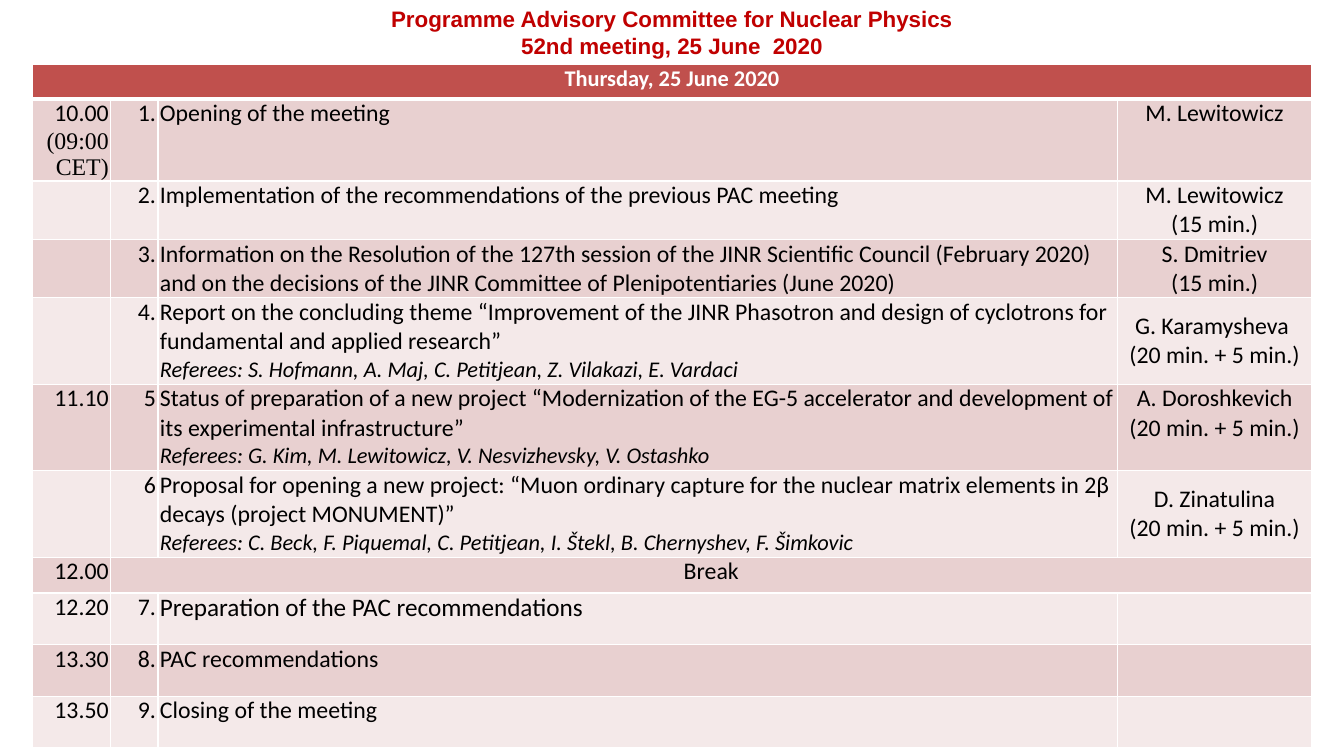
from dataclasses import dataclass

import pptx
import pptx.dml.color
import pptx.enum.text
import pptx.oxml
import pptx.oxml.ns
import pptx.util
from lxml import etree

Cm = pptx.util.Cm
Pt = pptx.util.Pt
RGBColor = pptx.dml.color.RGBColor
Align = pptx.enum.text.PP_ALIGN
Anchor = pptx.enum.text.MSO_ANCHOR

WHITE = RGBColor(0xFF, 0xFF, 0xFF)
BLACK = RGBColor(0x00, 0x00, 0x00)
TITLE_RED = RGBColor(0xC0, 0x00, 0x00)
HEADER_RED = RGBColor(0xC0, 0x50, 0x4D)
BAND_DARK = RGBColor(0xE8, 0xD0, 0xD0)
BAND_LIGHT = RGBColor(0xF4, 0xE9, 0xE9)

LEFT, TOP, WIDTH = 0.81, 1.63, 32.25
COL_WIDTHS = [1.98, 1.19, 24.18, 4.9]
HEADER_HEIGHT = 0.86


@dataclass(frozen=True)
class Style:
    size: float = 17
    font: str = "Calibri"
    color: RGBColor = BLACK
    bold: bool = False
    italic: bool = False


BODY = Style()
LARGE = Style(size=18)
REFEREES = Style(size=16, italic=True)
CET = Style(font="Times New Roman")
HEADER = Style(size=16, color=WHITE, bold=True)
TITLE = Style(size=16, font="Arial", color=TITLE_RED, bold=True)


@dataclass(frozen=True)
class Item:
    height: float
    time: str
    number: str
    topic: str
    speaker: str = ""
    duration: str = ""
    referees: str = ""
    zone: str = ""
    topic_style: Style = BODY
    centred: bool = False


ITEMS = [
    Item(2.03, "10.00", "1.", "Opening of the meeting", "M. Lewitowicz", zone="(09:00|CET)"),
    Item(1.47, "", "2.", "Implementation of the recommendations of the previous PAC meeting",
         "M. Lewitowicz", "(15 min.)"),
    Item(1.47, "", "3.",
         "Information on the Resolution of the 127th session of the JINR Scientific Council "
         "(February 2020) and on the decisions of the JINR Committee of Plenipotentiaries (June 2020)",
         "S. Dmitriev", "(15 min.)"),
    Item(2.18, "", "4.",
         "Report on the concluding theme “Improvement of the JINR Phasotron and design of "
         "cyclotrons for fundamental and applied research”",
         "G. Karamysheva ", "(20 min. + 5 min.)",
         "Referees: S. Hofmann, A. Maj, C. Petitjean, Z. Vilakazi, E. Vardaci", centred=True),
    Item(2.18, "11.10", "5",
         "Status of preparation of a new project “Modernization of the EG-5 accelerator and "
         "development of its experimental infrastructure”",
         "A. Doroshkevich", "(20 min. + 5 min.)",
         "Referees: G. Kim, M. Lewitowicz, V. Nesvizhevsky, V. Ostashko"),
    Item(2.18, "", "6",
         "Proposal for opening a new project: “Muon ordinary capture for the nuclear matrix "
         "elements in 2β decays (project MONUMENT)”",
         "D. Zinatulina", "(20 min. + 5 min.)",
         "Referees: C. Beck, F. Piquemal, C. Petitjean, I. Štekl, B. Chernyshev, F. Šimkovic",
         centred=True),
    Item(0.9, "12.00", "", "Break"),
    Item(1.3, "12.20", "7.", "Preparation of the PAC recommendations", topic_style=LARGE),
    Item(1.3, "13.30", "8.", "PAC recommendations"),
    Item(1.3, "13.50", "9.", "Closing of the meeting"),
]


def write(tf, lines: list[tuple[str, Style]], align: Align) -> None:
    shown = [(text, style) for text, style in lines if text]
    for i, (text, style) in enumerate(shown):
        p = tf.paragraphs[0] if i == 0 else tf.add_paragraph()
        p.alignment = align
        r = p.add_run()
        r.text = text
        r.font.size = Pt(style.size)
        r.font.name = style.font
        r.font.color.rgb = style.color
        r.font.bold = style.bold
        r.font.italic = style.italic


def format_cell(cell, fill: RGBColor, top: float = 1, bottom: float = 1) -> None:
    qn = pptx.oxml.ns.qn
    tcPr = cell._tc.get_or_add_tcPr()
    for side, width in (("L", 1), ("R", 1), ("T", top), ("B", bottom)):
        ln = etree.SubElement(tcPr, qn(f"a:ln{side}"), w=str(Pt(width)))
        solid = etree.SubElement(ln, qn("a:solidFill"))
        etree.SubElement(solid, qn("a:srgbClr"), val=str(WHITE))
    cell.fill.solid()
    cell.fill.fore_color.rgb = fill
    cell.margin_left = cell.margin_right = Cm(0.05)
    cell.margin_top = cell.margin_bottom = 0


def fill_item(tbl, row: int, item: Item) -> None:
    time, number, topic, speaker = (tbl.cell(row, c) for c in range(4))
    zone = [(text, CET) for text in item.zone.split("|")]
    write(time.text_frame, [(item.time, BODY), *zone], Align.RIGHT)
    if not item.number:
        number.merge(speaker)
        write(number.text_frame, [(item.topic, item.topic_style)], Align.CENTER)
        return
    write(number.text_frame, [(item.number, BODY)], Align.RIGHT)
    write(topic.text_frame, [(item.topic, item.topic_style), (item.referees, REFEREES)], Align.LEFT)
    write(speaker.text_frame, [(item.speaker, BODY), (item.duration, BODY)], Align.CENTER)
    if item.centred:
        speaker.vertical_anchor = Anchor.MIDDLE
    if item.referees:
        speaker.margin_left = speaker.margin_right = 0


def add_agenda(s) -> None:
    heights = [HEADER_HEIGHT] + [item.height for item in ITEMS]
    tbl = s.shapes.add_table(len(heights), len(COL_WIDTHS), Cm(LEFT), Cm(TOP),
                             Cm(WIDTH), Cm(sum(heights))).table
    tbl.horz_banding = False
    for col, width in zip(tbl.columns, COL_WIDTHS):
        col.width = Cm(width)
    for i, (row, height) in enumerate(zip(tbl.rows, heights)):
        row.height = Cm(height)
        fill = HEADER_RED if i == 0 else BAND_DARK if i % 2 else BAND_LIGHT
        for cell in row.cells:
            format_cell(cell, fill, top=3 if i == 1 else 1, bottom=3 if i == 0 else 1)
    tbl.cell(0, 0).merge(tbl.cell(0, 3))
    write(tbl.cell(0, 0).text_frame, [("Thursday, 25 June 2020", HEADER)], Align.CENTER)
    for i, item in enumerate(ITEMS, 1):
        fill_item(tbl, i, item)


def add_title(s) -> None:
    tf = s.shapes.add_textbox(Cm(LEFT), 0, Cm(WIDTH), Cm(TOP)).text_frame
    tf.word_wrap = True
    write(tf, [("Programme Advisory Committee for Nuclear Physics", TITLE),
               ("52nd meeting, 25 June  2020", TITLE)], Align.CENTER)


def main() -> None:
    prs = pptx.Presentation()
    prs.slide_width, prs.slide_height = Cm(33.87), Cm(19.05)
    s = prs.slides.add_slide(prs.slide_layouts[6])
    add_agenda(s)
    add_title(s)
    prs.save("out.pptx")


if __name__ == "__main__":
    main()
